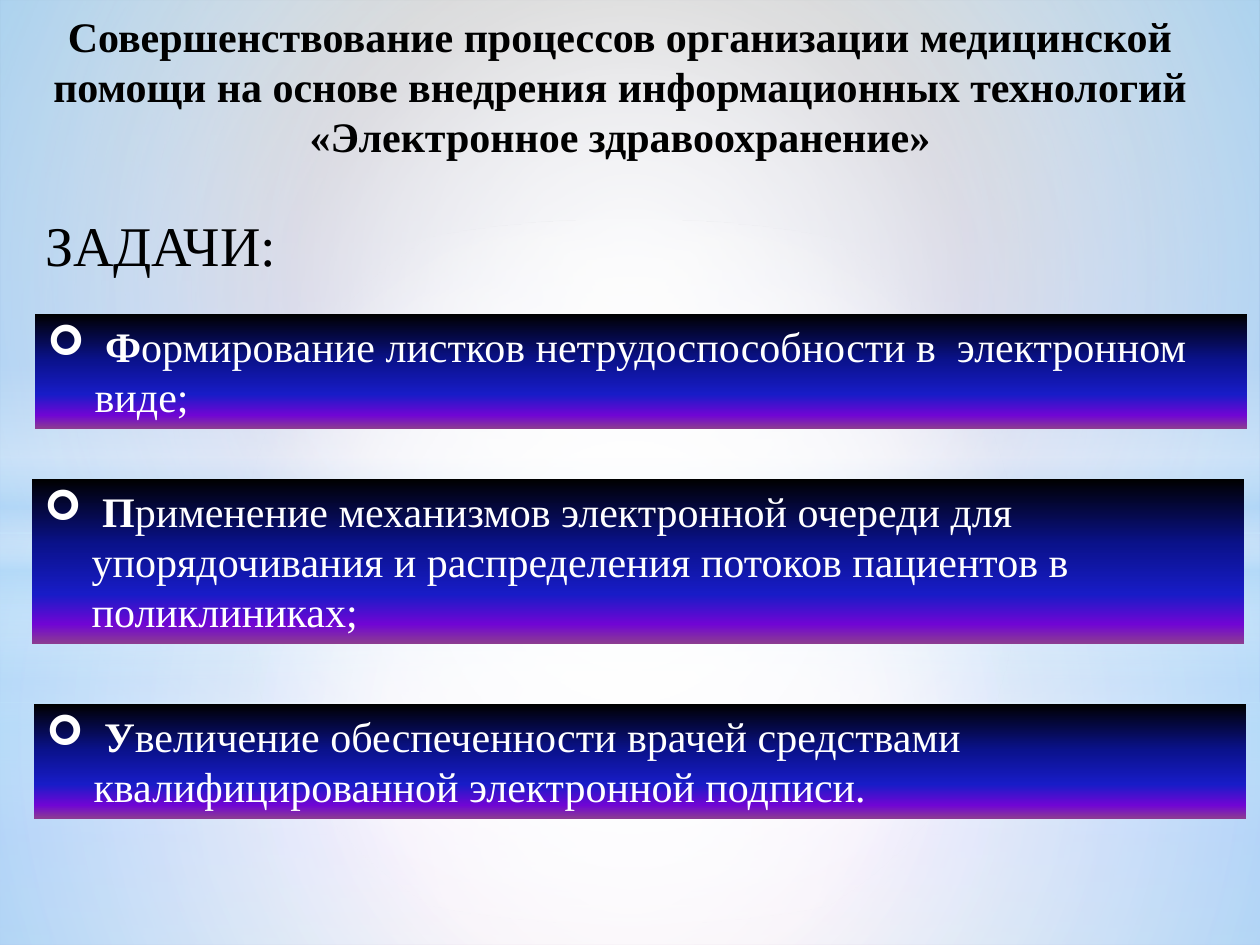
import pptx
import pptx.util
import pptx.dml.color
import pptx.enum.shapes
import pptx.enum.text
import pptx.oxml
import pptx.oxml.ns

PX = 914400 / 126
WIDTH, HEIGHT = 1260, 945
FONT = "Times New Roman"
COLORS = {
    "black": "000000",
    "white": "FFFFFF",
    "sky": "B4DCFA",
    "navy": "0A128C",
    "blue": "181CC7",
    "violet": "7005D4",
    "plum": "8C3D91",
}
NIGHT = [(0, "black", 100), (40, "navy", 100), (70, "blue", 100),
         (88, "violet", 100), (100, "plum", 100)]
LOWER = [(0, "white", 91), (37, "white", 76), (100, "sky", 79)]
UPPER = [(0, "white", 89), (48, "white", 62), (100, "sky", 79)]
BAND = [(0, "white", 0), (29, "white", 30), (45, "sky", 40),
        (55, "white", 26), (65, "sky", 60), (100, "white", 0)]
TITLE = ("Совершенствование процессов организации медицинской помощи на основе "
         "внедрения информационных технологий «Электронное здравоохранение»")
TASKS = [
    ((35, 314, 1212, 115), " Ф",
     "ормирование листков нетрудоспособности в  электронном виде;"),
    ((32, 479, 1212, 165), " П",
     "рименение механизмов электронной очереди для упорядочивания и "
     "распределения потоков пациентов в поликлиниках;"),
    ((34, 704, 1212, 115), " У",
     "величение обеспеченности врачей средствами квалифицированной "
     "электронной подписи."),
]


def emu(px):
    return pptx.util.Emu(round(px * PX))


def set_gradient(fill, root, stops, radial=False):
    fill.gradient()
    old = root.find(".//" + pptx.oxml.ns.qn("a:gradFill"))
    gs = "".join(
        f'<a:gs pos="{pos * 1000}"><a:srgbClr val="{COLORS[name]}">'
        f'<a:alpha val="{alpha * 1000}"/></a:srgbClr></a:gs>'
        for pos, name, alpha in stops)
    if radial:
        shade = ('<a:path path="circle"><a:fillToRect l="50000" t="50000" '
                 'r="50000" b="50000"/></a:path>')
    else:
        shade = '<a:lin ang="5400000" scaled="0"/>'
    new = pptx.oxml.parse_xml(
        f'<a:gradFill {pptx.oxml.ns.nsdecls("a")} rotWithShape="1">'
        f'<a:gsLst>{gs}</a:gsLst>{shade}</a:gradFill>')
    old.getparent().replace(old, new)


def add_gradient_shape(s, box, stops, radial=False, kind="RECTANGLE"):
    preset = getattr(pptx.enum.shapes.MSO_SHAPE, kind)
    sp = s.shapes.add_shape(preset, *map(emu, box))
    sp.shadow.inherit = False
    sp.line.fill.background()
    set_gradient(sp.fill, sp._element.spPr, stops, radial)
    return sp


def add_run(p, text, size, color, bold=False):
    r = p.add_run()
    r.text = text
    r.font.name = FONT
    r.font.size = pptx.util.Pt(size)
    r.font.bold = bold
    r.font.color.rgb = pptx.dml.color.RGBColor.from_string(COLORS[color])


def start_text(sp, align="LEFT"):
    tf = sp.text_frame
    tf.word_wrap = True
    tf.auto_size = pptx.enum.text.MSO_AUTO_SIZE.SHAPE_TO_FIT_TEXT
    tf.vertical_anchor = pptx.enum.text.MSO_ANCHOR.TOP
    p = tf.paragraphs[0]
    p.alignment = getattr(pptx.enum.text.PP_ALIGN, align)
    return p


def add_backdrop(s, box, split, band_top):
    x, y, w, h = box
    add_gradient_shape(s, (x, y + split, w, h - split), LOWER, True)
    add_gradient_shape(s, (x, y, w, split), UPPER, True)
    add_gradient_shape(s, (x, y + band_top, w, 315), BAND)


def add_glow(s, box, reach):
    x, y, w, h = box
    stops = [(0, "white", 100), (reach, "white", 0)]
    add_gradient_shape(s, (x, y + 220, w, h - 242), stops, True, "OVAL")


def add_label(s, box, text, size, align="LEFT", bold=False):
    sp = s.shapes.add_textbox(*map(emu, box))
    add_run(start_text(sp, align), text, size, "black", bold)


def add_task(s, box, initial, rest):
    sp = add_gradient_shape(s, box, NIGHT)
    p = start_text(sp)
    pPr = p._p.get_or_add_pPr()
    pPr.set("marL", "342900")
    pPr.set("indent", "-342900")
    for tag, attr, value in (("buFont", "typeface", "Wingdings"),
                             ("buChar", "char", "➢")):
        pptx.oxml.ns.qn("a:" + tag)
        pPr.append(pptx.oxml.parse_xml(
            f'<a:{tag} {pptx.oxml.ns.nsdecls("a")} {attr}="{value}"/>'))
    add_run(p, initial, 24, "white", True)
    add_run(p, rest, 24, "white")


def main():
    prs = pptx.Presentation()
    prs.slide_width, prs.slide_height = emu(WIDTH), emu(HEIGHT)
    s = prs.slides.add_slide(prs.slide_layouts[6])
    set_gradient(s.background.fill, s._element, NIGHT)
    page = (0, 0, WIDTH, HEIGHT)
    for split, band_top, reach in ((703, 519, 56), (533, 365, 54)):
        add_backdrop(s, page, split, band_top)
        add_glow(s, page, reach)
    add_label(s, (35, 4, 1170, 165), TITLE, 24, "CENTER", True)
    add_label(s, (33, 204, 318, 81), "ЗАДАЧИ:", 32)
    for box, initial, rest in TASKS:
        add_task(s, box, initial, rest)
    prs.save("out.pptx")


if __name__ == "__main__":
    main()
